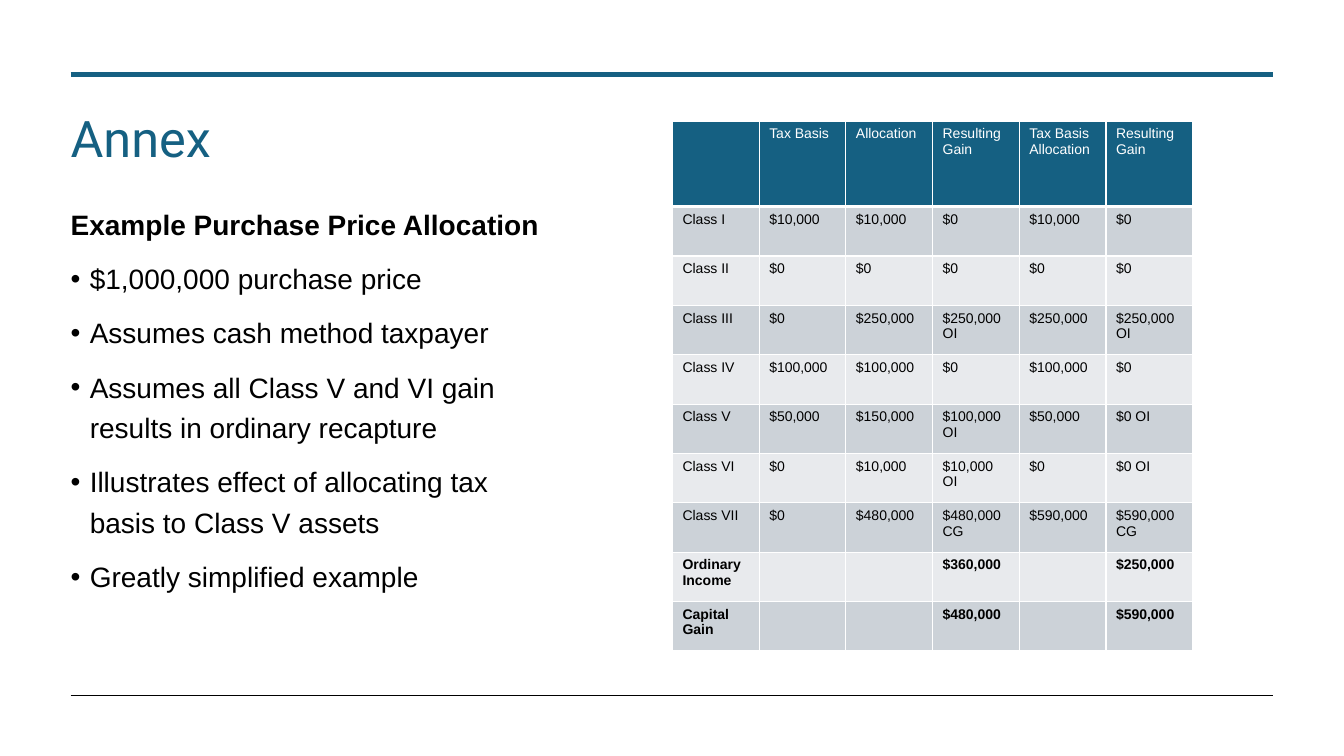
"""Build the annex slide with a purchase price allocation table."""
import pptx
import pptx.dml.color
import pptx.enum.shapes
import pptx.enum.text
import pptx.oxml
import pptx.oxml.ns
import pptx.util

Inches = pptx.util.Inches
Pt = pptx.util.Pt
ANCHOR = pptx.enum.text.MSO_ANCHOR

COLORS = {"accent": "156082", "black": "000000", "white": "FFFFFF",
          "dark_band": "CCD2D8", "light_band": "E8EAED"}

HEADING = "Example Purchase Price Allocation"
ASSUMPTIONS = [
    "$1,000,000 purchase price",
    "Assumes cash method taxpayer",
    "Assumes all Class V and VI gain results in ordinary recapture",
    "Illustrates effect of allocating tax basis to Class V assets",
    "Greatly simplified example",
]
ALLOCATION = [
    ["", "Tax Basis", "Allocation", "Resulting Gain", "Tax Basis Allocation", "Resulting Gain"],
    ["Class I", "$10,000", "$10,000", "$0", "$10,000", "$0"],
    ["Class II", "$0", "$0", "$0", "$0", "$0"],
    ["Class III", "$0", "$250,000", "$250,000 OI", "$250,000", "$250,000 OI"],
    ["Class IV", "$100,000", "$100,000", "$0", "$100,000", "$0"],
    ["Class V", "$50,000", "$150,000", "$100,000 OI", "$50,000", "$0 OI"],
    ["Class VI", "$0", "$10,000", "$10,000 OI", "$0", "$0 OI"],
    ["Class VII", "$0", "$480,000", "$480,000 CG", "$590,000", "$590,000 CG"],
    ["Ordinary Income", "", "", "$360,000", "", "$250,000"],
    ["Capital Gain", "", "", "$480,000", "", "$590,000"],
]
FIRST_TOTAL_ROW = 8


def color(name):
    return pptx.dml.color.RGBColor.from_string(COLORS[name])


def apply(target, values):
    for name, value in values.items():
        setattr(target, name, value)


def add_element(parent, tag, **attributes):
    element = pptx.oxml.parse_xml(f"<{tag} {pptx.oxml.ns.nsdecls('a')}/>")
    for name, value in attributes.items():
        element.set(name, str(value))
    parent.append(element)
    return element


def place(shape, left, top, width, height):
    apply(shape, {"left": Inches(left), "top": Inches(top),
                  "width": Inches(width), "height": Inches(height)})


def write(para, text, font, size, ink, bold=False):
    span = para.add_run()
    span.text = text
    apply(span.font, {"name": font, "size": Pt(size), "bold": bold})
    span.font.color.rgb = color(ink)


def add_rule(page, top, ink, weight):
    rule = page.shapes.add_connector(pptx.enum.shapes.MSO_CONNECTOR.STRAIGHT,
                                     Inches(0.7), Inches(top), Inches(12.63), Inches(top))
    rule.line.color.rgb = color(ink)
    rule.line.width = Pt(weight)
    add_element(rule._element.spPr, "a:effectLst")


def fill_title(title):
    place(title, 0.6, 1.04, 12.02, 0.74)
    apply(title.text_frame, {"vertical_anchor": ANCHOR.MIDDLE,
                             "auto_size": pptx.enum.text.MSO_AUTO_SIZE.NONE})
    para = title.text_frame.paragraphs[0]
    apply(para, {"alignment": pptx.enum.text.PP_ALIGN.LEFT, "line_spacing": 0.85})
    write(para, "Annex", "Roboto", 36, "accent")


def fill_assumptions(body):
    place(body, 0.6, 1.94, 4.97, 5.06)
    frame = body.text_frame
    apply(frame, {"vertical_anchor": ANCHOR.TOP, "word_wrap": True,
                  "auto_size": pptx.enum.text.MSO_AUTO_SIZE.NONE})
    for index, text in enumerate([HEADING] + ASSUMPTIONS):
        is_heading = index == 0
        para = frame.paragraphs[0] if is_heading else frame.add_paragraph()
        apply(para, {"line_spacing": 1.2, "space_before": Pt(10)})
        indent = 0 if is_heading else Inches(0.19)
        properties = para._p.get_or_add_pPr()
        properties.set("marL", str(indent))
        properties.set("indent", str(-indent))
        if is_heading:
            add_element(properties, "a:buNone")
        else:
            add_element(properties, "a:buFont", typeface="Arial")
            add_element(properties, "a:buChar", char="•")
        write(para, text, "Arial", 20, "black", is_heading)


def set_borders(cell, bottom_weight):
    properties = cell._tc.get_or_add_tcPr()
    weights = {"a:lnL": 1, "a:lnR": 1, "a:lnT": 1, "a:lnB": bottom_weight}
    for position, (tag, weight) in enumerate(weights.items()):
        border = add_element(properties, tag, w=int(Pt(weight)))
        fill = add_element(border, "a:solidFill")
        add_element(fill, "a:srgbClr", val=COLORS["white"])
        properties.insert(position, border)


def add_allocation_table(page):
    rows, columns = len(ALLOCATION), len(ALLOCATION[0])
    table = page.shapes.add_table(rows, columns, Inches(6.67), Inches(1.2),
                                  Inches(5.16), Inches(5.26)).table
    for row_index, values in enumerate(ALLOCATION):
        is_header = row_index == 0
        table.rows[row_index].height = Inches(0.85 if is_header else 0.49)
        band = "accent" if is_header else ("light_band", "dark_band")[row_index % 2]
        for column_index, text in enumerate(values):
            cell = table.cell(row_index, column_index)
            cell.fill.solid()
            cell.fill.fore_color.rgb = color(band)
            set_borders(cell, 3 if is_header else 1)
            para = cell.text_frame.paragraphs[0]
            para.font.size = Pt(10)
            if text:
                write(para, text, "Arial", 10, "white" if is_header else "black",
                      row_index >= FIRST_TOTAL_ROW)


def main():
    deck = pptx.Presentation()
    apply(deck, {"slide_width": Inches(13.33), "slide_height": Inches(7.5)})
    page = deck.slides.add_slide(deck.slide_layouts[1])
    add_rule(page, 0.74, "accent", 3)
    add_rule(page, 6.9, "black", 0.5)
    fill_title(page.shapes.title)
    fill_assumptions(page.placeholders[1])
    add_allocation_table(page)
    deck.save("out.pptx")


if __name__ == "__main__":
    main()
